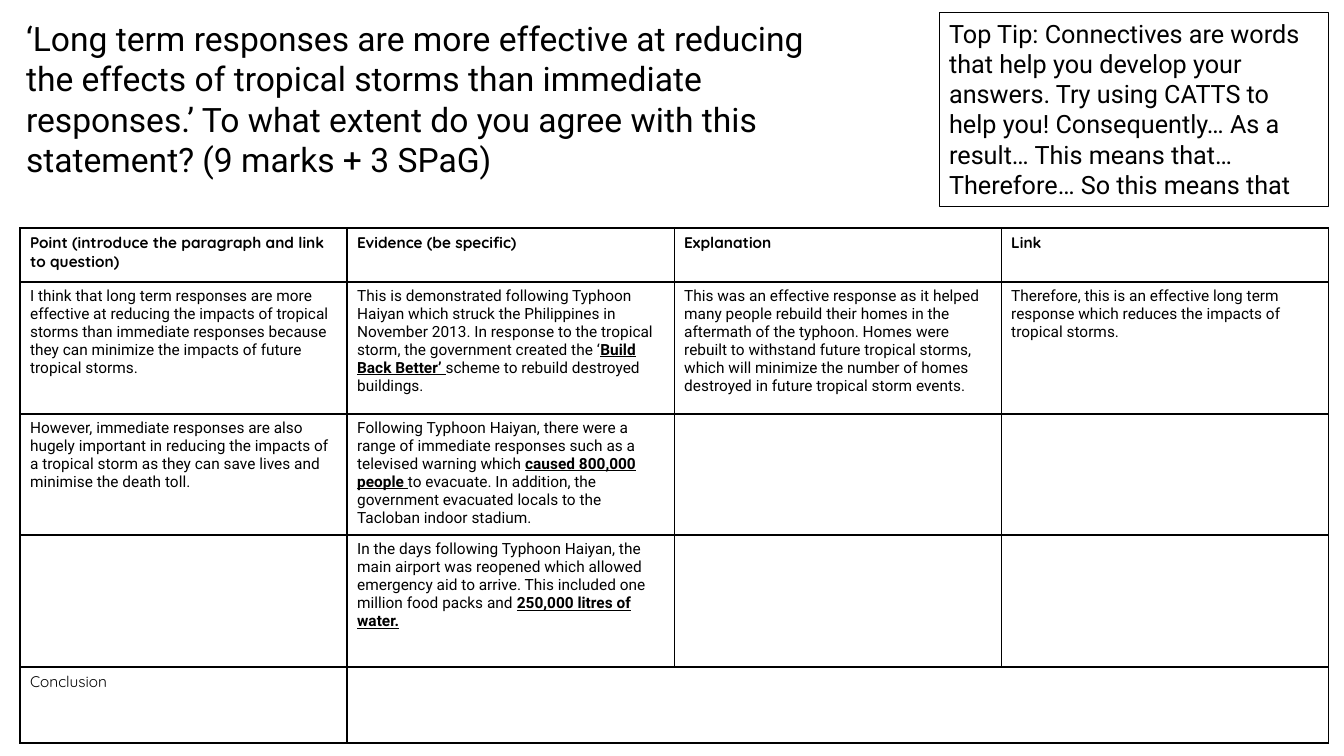
from dataclasses import dataclass

import pptx
import pptx.dml.color
import pptx.enum.shapes
import pptx.enum.text
import pptx.oxml
import pptx.oxml.ns
import pptx.util

EMU_PER_PX = 914400 / 100.8
TITLE_ONLY = 5


@dataclass(frozen=True)
class Theme:
    ink: str = "000000"
    body_font: str = "Roboto"
    label_font: str = "Quicksand"
    title_size: int = 24
    tip_size: int = 18
    table_size: int = 11
    box_line: float = 0.75
    grid_line: float = 1


def px(length):
    return pptx.util.Emu(round(length * EMU_PER_PX))


class PageBuilder:
    def __init__(self, deck, theme):
        self.theme = theme
        self.page = deck.slides.add_slide(deck.slide_layouts[TITLE_ONLY])
        self.ink = pptx.dml.color.RGBColor.from_string(theme.ink)

    def span(self, para, text, size, font=None, bold=False, underline=False):
        span = para.add_run()
        span.text = text
        span.font.name = font or self.theme.body_font
        span.font.size = pptx.util.Pt(size)
        span.font.bold = bold
        span.font.underline = underline
        span.font.color.rgb = self.ink

    def fill_frame(self, frame, text, size):
        frame.word_wrap = True
        frame.auto_size = pptx.enum.text.MSO_AUTO_SIZE.SHAPE_TO_FIT_TEXT
        frame.vertical_anchor = pptx.enum.text.MSO_ANCHOR.TOP
        para = frame.paragraphs[0]
        para.alignment = pptx.enum.text.PP_ALIGN.LEFT
        self.span(para, text, size)

    def title(self, text, left, top, width, height):
        box = self.page.shapes.title
        box.left, box.top, box.width, box.height = map(px, (left, top, width, height))
        self.fill_frame(box.text_frame, text, self.theme.title_size)

    def outlined_box(self, text, left, top, width, height):
        box = self.page.shapes.add_shape(
            pptx.enum.shapes.MSO_SHAPE.RECTANGLE, *map(px, (left, top, width, height)))
        box.shadow.inherit = False
        box.fill.background()
        box.line.color.rgb = self.ink
        box.line.width = pptx.util.Pt(self.theme.box_line)
        self.fill_frame(box.text_frame, text, self.theme.tip_size)

    def cell_borders(self, cell):
        properties = cell._tc.get_or_add_tcPr()
        width = pptx.util.Pt(self.theme.grid_line)
        for position, side in enumerate(("lnL", "lnR", "lnT", "lnB")):
            properties.insert(position, pptx.oxml.parse_xml(
                f'<a:{side} {pptx.oxml.ns.nsdecls("a")} w="{width}"><a:solidFill>'
                f'<a:srgbClr val="{self.theme.ink}"/></a:solidFill></a:{side}>'))

    def table(self, left, top, column_width, row_heights, headings, rows, closing):
        """Draw headings, rows of cells, and a closing row with one wide answer cell.

        Each cell is a tuple of texts that alternate between plain and key phrase.
        """
        count = len(headings)
        grid = self.page.shapes.add_table(
            len(row_heights), count, px(left), px(top),
            px(column_width * count), px(sum(row_heights))).table
        grid.first_row = grid.horz_banding = False
        for column in grid.columns:
            column.width = px(column_width)
        for row, height in zip(grid.rows, row_heights):
            row.height = px(height)
        for cell in grid.iter_cells():
            cell.fill.background()
            self.cell_borders(cell)

        size, label = self.theme.table_size, self.theme.label_font
        for column, heading in enumerate(headings):
            para = grid.cell(0, column).text_frame.paragraphs[0]
            self.span(para, heading, size, label, bold=True)
        for row, cells in enumerate(rows, start=1):
            for column, texts in enumerate(cells):
                para = grid.cell(row, column).text_frame.paragraphs[0]
                for order, text in enumerate(texts):
                    is_key = order % 2 == 1
                    self.span(para, text, size, bold=is_key, underline=is_key)
        last = len(row_heights) - 1
        self.span(grid.cell(last, 0).text_frame.paragraphs[0], closing, size, label)
        grid.cell(last, 1).merge(grid.cell(last, count - 1))


QUESTION = (
    "‘Long term responses are more effective at reducing the effects of tropical storms "
    "than immediate responses.’ To what extent do you agree with this statement? "
    "(9 marks + 3 SPaG)")
TIP = (
    "Top Tip: Connectives are words that help you develop your answers. Try using CATTS "
    "to help you! Consequently… As a result… This means that… Therefore… So this means that")
HEADINGS = ("Point (introduce the paragraph and link to question)",
            "Evidence (be specific)", "Explanation", "Link")
PARAGRAPHS = (
    (("I think that long term responses are more effective at reducing the impacts of "
      "tropical storms than immediate responses because they can minimize the impacts of "
      "future tropical storms.",),
     ("This is demonstrated following Typhoon Haiyan which struck the Philippines in "
      "November 2013. In response to the tropical storm, the government created the ‘",
      "Build Back Better’ ",
      "scheme to rebuild destroyed buildings."),
     ("This was an effective response as it helped many people rebuild their homes in the "
      "aftermath of the typhoon. Homes were rebuilt to withstand future tropical storms, "
      "which will minimize the number of homes destroyed in future tropical storm events.",),
     ("Therefore, this is an effective long term response which reduces the impacts of "
      "tropical storms.",)),
    (("However, immediate responses are also hugely important in reducing the impacts of a "
      "tropical storm as they can save lives and minimise the death toll.",),
     ("Following Typhoon Haiyan, there were a range of immediate responses such as a "
      "televised warning which ",
      "caused 800,000 people ",
      "to evacuate. In addition, the government evacuated locals to the Tacloban indoor "
      "stadium.")),
    ((),
     ("In the days following Typhoon Haiyan, the main airport was reopened which allowed "
      "emergency aid to arrive. This included one million food packs and ",
      "250,000 litres of water.")),
)


def main():
    deck = pptx.Presentation()
    deck.slide_width = pptx.util.Inches(13.33)
    deck.slide_height = pptx.util.Inches(7.5)
    builder = PageBuilder(deck, Theme())
    builder.table(20, 228, 327, (54, 132, 118, 132, 76), HEADINGS, PARAGRAPHS, "Conclusion")
    builder.title(QUESTION, 16, 13, 839, 173)
    builder.outlined_box(TIP, 939, 13, 389, 194)
    deck.save("out.pptx")


if __name__ == "__main__":
    main()
